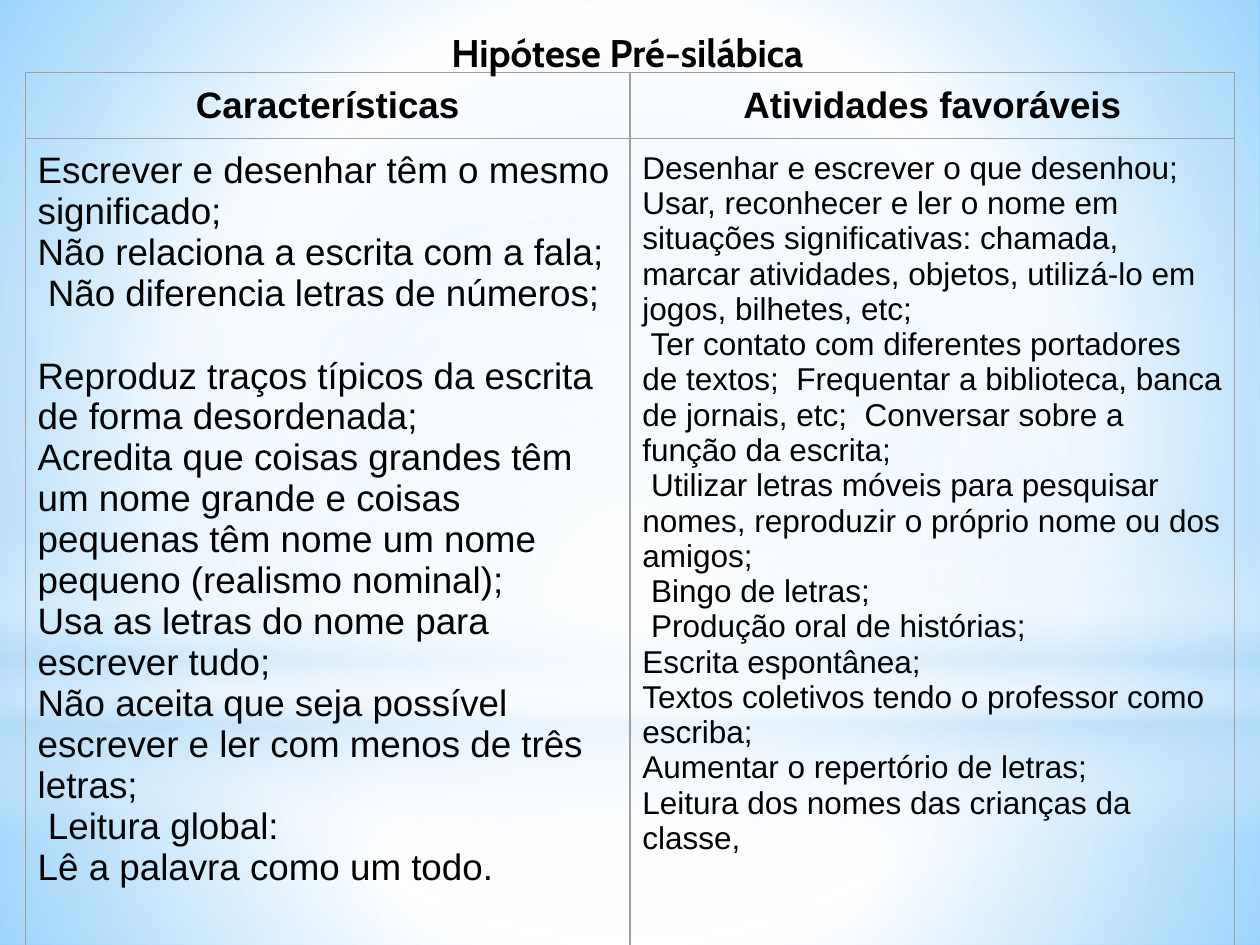
from lxml.etree import SubElement
from pptx import Presentation
from pptx.dml.color import RGBColor
from pptx.enum.shapes import MSO_SHAPE as Shape
from pptx.enum.text import MSO_ANCHOR as Anchor, PP_ALIGN as Align
from pptx.oxml.ns import qn
from pptx.util import Cm, Pt

COLORS = {
    "text": "000000",
    "border": "9E9E9E",
    "white": "FFFFFF",
    "pale": "B4DCFA",
    "sky": "99D4FE",
    "azure": "54BDFF",
}
WIDTH, HEIGHT = 25.4, 19.05
MARGIN = 0.25
HEADERS = ["Características", "Atividades favoráveis"]
FEATURES = [
    "Escrever e desenhar têm o mesmo significado;",
    "Não relaciona a escrita com a fala;",
    " Não diferencia letras de números;",
    "Reproduz traços típicos da escrita de forma desordenada;",
    "Acredita que coisas grandes têm um nome grande e coisas pequenas "
    "têm nome um nome pequeno (realismo nominal);",
    "Usa as letras do nome para escrever tudo;",
    "Não aceita que seja possível escrever e ler com menos de três letras;",
    " Leitura global:",
    "Lê a palavra como um todo.",
]
ACTIVITIES = [
    "Desenhar e escrever o que desenhou;",
    "Usar, reconhecer e ler o nome em situações significativas: chamada, "
    "marcar atividades, objetos, utilizá-lo em jogos, bilhetes, etc;",
    " Ter contato com diferentes portadores de textos;  Frequentar a "
    "biblioteca, banca de jornais, etc;  Conversar sobre a função da escrita;",
    " Utilizar letras móveis para pesquisar nomes, reproduzir o próprio "
    "nome ou dos amigos;",
    " Bingo de letras;",
    " Produção oral de histórias;",
    "Escrita espontânea;",
    "Textos coletivos tendo o professor como escriba;",
    "Aumentar o repertório de letras;",
    "Leitura dos nomes das crianças da classe,",
]
GLOWS = [
    (Shape.RECTANGLE, 14.17, 4.88, None,
     [(0, "white", 89), (37, "white", 74), (100, "pale", 77)]),
    (Shape.RECTANGLE, 0, 14.17, None,
     [(0, "white", 87), (48, "white", 60), (100, "pale", 77)]),
    (Shape.RECTANGLE, 10.46, 6.35, 90,
     [(0, "white", 0), (29, "white", 28), (45, "pale", 40),
      (55, "white", 24), (65, "pale", 60), (100, "white", 0)]),
    (Shape.OVAL, 4.45, 14.17, None,
     [(0, "white", 100), (56, "white", 0), (100, "white", 0)]),
]


def add_node(parent, tag, **attributes):
    return SubElement(parent, qn(tag), {k: str(v) for k, v in attributes.items()})


def set_gradient(fill, owner, stops, angle=None):
    fill.gradient()
    gradient = next(owner.iter(qn("a:gradFill")))
    for child in list(gradient):
        gradient.remove(child)
    stop_list = add_node(gradient, "a:gsLst")
    for position, color, alpha in stops:
        stop = add_node(stop_list, "a:gs", pos=position * 1000)
        tint = add_node(stop, "a:srgbClr", val=COLORS[color])
        add_node(tint, "a:alpha", val=alpha * 1000)
    if angle is None:
        circle = add_node(gradient, "a:path", path="circle")
        add_node(circle, "a:fillToRect", l=50000, t=50000, r=50000, b=50000)
    else:
        add_node(gradient, "a:lin", ang=angle * 60000, scaled=0)


def add_glow(page, kind, top, height, angle, stops):
    glow = page.shapes.add_shape(kind, 0, Cm(top), Cm(WIDTH), Cm(height))
    glow.shadow.inherit = False
    glow.line.fill.background()
    set_gradient(glow.fill, glow.element, stops, angle)


def add_text(para, text, size, font="Arial", bold=False, align=Align.LEFT):
    para.alignment = align
    span = para.add_run()
    span.text = text
    span.font.name = font
    span.font.size = Pt(size)
    span.font.bold = bold
    span.font.color.rgb = RGBColor.from_string(COLORS["text"])


def set_insets(box):
    box.margin_left = box.margin_right = Cm(MARGIN)
    box.margin_top = box.margin_bottom = Cm(MARGIN)


def fill_cell(cell, lines, size, **style):
    set_insets(cell)
    cell.vertical_anchor = Anchor.TOP
    properties = cell._tc.get_or_add_tcPr()
    for side in "LRTB":
        border = add_node(properties, f"a:ln{side}", w=Pt(0.75))
        solid = add_node(border, "a:solidFill")
        add_node(solid, "a:srgbClr", val=COLORS["border"])
    cell.fill.background()
    frame = cell.text_frame
    for index, line in enumerate(lines):
        para = frame.add_paragraph() if index else frame.paragraphs[0]
        add_text(para, line, size, **style)


def add_hypothesis_table(page):
    frame = page.shapes.add_table(2, 2, Cm(0.51), Cm(1.46), Cm(24.38), Cm(18.2))
    table = frame.table
    table.first_row = table.horz_banding = False
    table.rows[0].height = Cm(1.33)
    table.rows[1].height = Cm(16.87)
    for column, header in enumerate(HEADERS):
        fill_cell(table.cell(0, column), [header], 21, bold=True, align=Align.CENTER)
    fill_cell(table.cell(1, 0), FEATURES, 21)
    fill_cell(table.cell(1, 1), ACTIVITIES, 18)
    table.cell(1, 0).text_frame.paragraphs[2].space_after = Pt(23.5)


def set_title(page, text):
    title = page.shapes.title
    title.left, title.top = Cm(2.46), Cm(0.33)
    title.width, title.height = Cm(20.37), Cm(1.45)
    box = title.text_frame
    set_insets(box)
    box.word_wrap = True
    box.vertical_anchor = Anchor.MIDDLE
    add_text(box.paragraphs[0], text, 22, font="Cabin", bold=True, align=Align.CENTER)
    page.shapes.element.append(title.element)


def main():
    deck = Presentation()
    deck.slide_width, deck.slide_height = Cm(WIDTH), Cm(HEIGHT)
    page = deck.slides.add_slide(deck.slide_layouts[5])
    set_gradient(page.background.fill, page.element,
                 [(0, "sky", 100), (60, "white", 100), (100, "azure", 100)])
    for glow in GLOWS:
        add_glow(page, *glow)
    add_hypothesis_table(page)
    set_title(page, "Hipótese Pré-silábica")
    deck.save("out.pptx")


if __name__ == "__main__":
    main()
